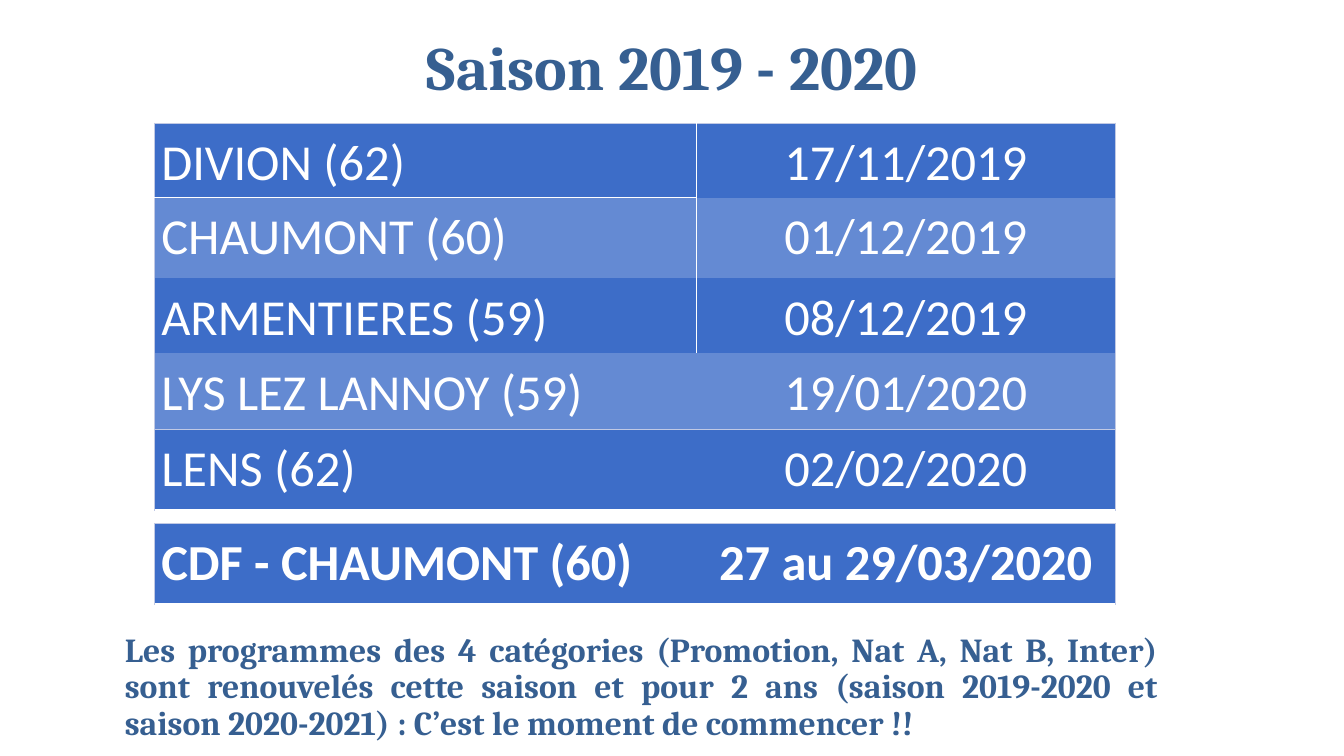
from dataclasses import dataclass

from lxml import etree
from pptx import Presentation
from pptx.dml.color import RGBColor
from pptx.enum.text import MSO_ANCHOR, MSO_AUTO_SIZE, PP_ALIGN
from pptx.oxml.ns import qn
from pptx.util import Emu, Pt

LEFT, CENTER, JUSTIFY = PP_ALIGN.LEFT, PP_ALIGN.CENTER, PP_ALIGN.JUSTIFY
MIDDLE, TOP = MSO_ANCHOR.MIDDLE, MSO_ANCHOR.TOP
NO_AUTOFIT = MSO_AUTO_SIZE.NONE
TITLE_ONLY = 5
EMU_PER_PX = 9144
PLAIN_TABLE_STYLE = "{2D5ABB26-0587-4C30-8999-92F81FD0307C}"


@dataclass(frozen=True)
class Theme:
    heading: str = "365F91"
    row: str = "3D6DC8"
    row_light: str = "648AD3"
    white: str = "FFFFFF"
    edge: str = "C1C9E4"
    heading_font: str = "Cambria"
    table_font: str = "Calibri"
    title_size: int = 44
    table_size: int = 36
    note_size: int = 24


THEME = Theme()
EDGE_LINE = (THEME.edge, 0.5)
COLUMN_LINE = (THEME.white, 1)
ROW_LINE = (THEME.white, 1.5)

TABLE_LEFT = 153
COLUMN_WIDTHS = (538, 415)

REGIONAL_ROUNDS = [
    ("DIVION (62)", "17/11/2019"),
    ("CHAUMONT (60)", "01/12/2019"),
    ("ARMENTIERES (59)", "08/12/2019"),
    ("LYS LEZ LANNOY (59)", "19/01/2020"),
]
LAST_ROUND = [("LENS (62)", "02/02/2020")]
FINAL = [("CDF - CHAUMONT (60)", "27 au 29/03/2020")]
NOTE = (
    "Les programmes des 4 catégories (Promotion, Nat A, Nat B, Inter) "
    "sont renouvelés cette saison et pour 2 ans (saison 2019-2020 et "
    "saison 2020-2021) : C’est le moment de commencer !!"
)


def px(length):
    return Emu(length * EMU_PER_PX)


def write(frame, text, font, size, color, bold, align, spacing):
    paragraph = frame.paragraphs[0]
    paragraph.alignment = align
    paragraph.line_spacing = spacing
    run = paragraph.add_run()
    run.text = text
    run.font.name = font
    run.font.size = Pt(size)
    run.font.bold = bold
    run.font.color.rgb = RGBColor.from_string(color)


def write_heading(shape, text, size, align):
    frame = shape.text_frame
    frame.word_wrap = True
    frame.auto_size = NO_AUTOFIT
    frame.vertical_anchor = MIDDLE
    write(frame, text, THEME.heading_font, size, THEME.heading, True, align, 0.9)


def add_title(slide, text, left, top, width, height):
    title = slide.shapes.title
    title.left, title.top = px(left), px(top)
    title.width, title.height = px(width), px(height)
    write_heading(title, text, THEME.title_size, CENTER)


def add_note(slide, text, left, top, width, height):
    note = slide.shapes.add_textbox(px(left), px(top), px(width), px(height))
    write_heading(note, text, THEME.note_size, JUSTIFY)


def set_borders(cell, borders):
    properties = cell._tc.get_or_add_tcPr()
    for side in "LRTB":
        if side in borders:
            color, points = borders[side]
            line = etree.SubElement(properties, qn(f"a:ln{side}"), w=str(Pt(points)))
            solid = etree.SubElement(line, qn("a:solidFill"))
            etree.SubElement(solid, qn("a:srgbClr"), val=color)


def fill_cell(cell, text, align, bold, color, borders):
    cell.margin_left = cell.margin_right = px(7)
    cell.margin_top = cell.margin_bottom = 0
    cell.vertical_anchor = TOP
    write(cell.text_frame, text, THEME.table_font, THEME.table_size,
          THEME.white, bold, align, 1.15)
    set_borders(cell, borders)
    cell.fill.solid()
    cell.fill.fore_color.rgb = RGBColor.from_string(color)


def add_rounds(slide, rounds, top, heights, bold=False, borders=None):
    frame = slide.shapes.add_table(
        len(rounds), len(COLUMN_WIDTHS), px(TABLE_LEFT), px(top),
        px(sum(COLUMN_WIDTHS)), px(sum(heights)))
    table = frame.table
    table.first_row = table.horz_banding = False
    table._tbl.tblPr.find(qn("a:tableStyleId")).text = PLAIN_TABLE_STYLE
    for column, width in zip(table.columns, COLUMN_WIDTHS):
        column.width = px(width)
    for index, (club_date, height) in enumerate(zip(rounds, heights)):
        table.rows[index].height = px(height)
        color = THEME.row_light if index % 2 else THEME.row
        for side, text in enumerate(club_date):
            outer = {"R" if side else "L": EDGE_LINE}
            extra = (borders or {}).get((index, side), {})
            fill_cell(table.cell(index, side), text, CENTER if side else LEFT,
                      bold, color, outer | extra)


def main():
    presentation = Presentation()
    presentation.slide_width, presentation.slide_height = px(1333), px(750)
    slide = presentation.slides.add_slide(presentation.slide_layouts[TITLE_ONLY])
    add_title(slide, "Saison 2019 - 2020", 92, -35, 1150, 211)
    regional_borders = {
        (0, 0): {"T": EDGE_LINE, "R": COLUMN_LINE, "B": ROW_LINE},
        (0, 1): {"T": EDGE_LINE},
        (1, 0): {"R": COLUMN_LINE},
        (2, 0): {"R": COLUMN_LINE},
        (3, 0): {"B": EDGE_LINE},
        (3, 1): {"B": EDGE_LINE},
    }
    add_rounds(slide, REGIONAL_ROUNDS, 122, (74, 80, 74, 77), borders=regional_borders)
    add_note(slide, NOTE, 114, 618, 1044, 129)
    single_borders = {
        (0, 0): {"T": EDGE_LINE, "B": ROW_LINE},
        (0, 1): {"T": EDGE_LINE, "B": ROW_LINE},
    }
    add_rounds(slide, LAST_ROUND, 426, (80,), borders=single_borders)
    add_rounds(slide, FINAL, 519, (80,), bold=True, borders=single_borders)
    presentation.save("out.pptx")


if __name__ == "__main__":
    main()
